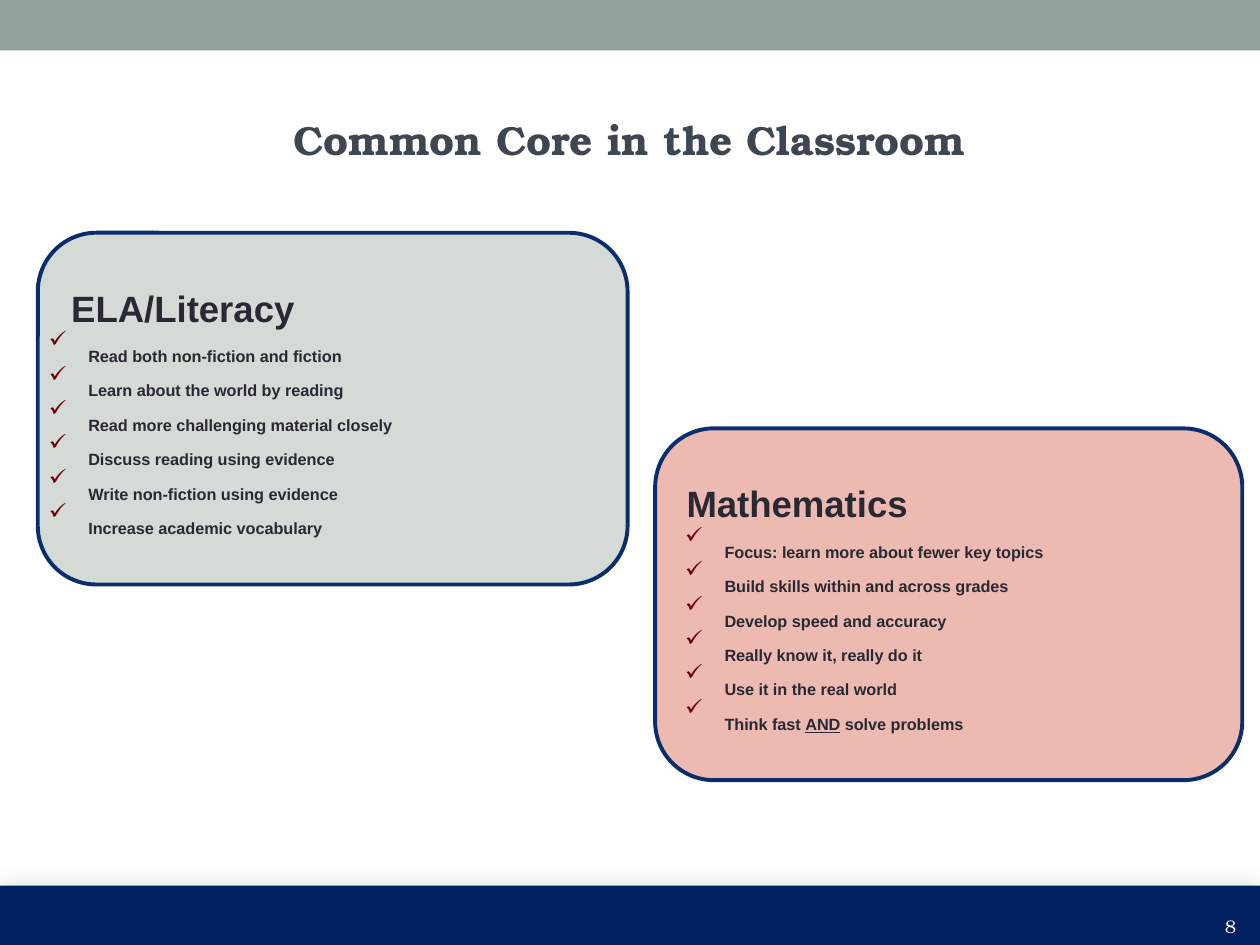
from dataclasses import dataclass

import pptx
import pptx.dml.color
import pptx.enum.shapes
import pptx.enum.text
import pptx.oxml.ns
import pptx.util
from lxml import etree

Pt = pptx.util.Pt
qn = pptx.oxml.ns.qn
Align = pptx.enum.text.PP_ALIGN
Anchor = pptx.enum.text.MSO_ANCHOR
Shape = pptx.enum.shapes.MSO_SHAPE


@dataclass(frozen=True)
class Theme:
    sage: str = "93A299"
    navy: str = "002060"
    border: str = "0A2D6B"
    ela: str = "D4DAD6"
    math: str = "EDBAB1"
    ink: str = "292934"
    title: str = "3E4652"
    check: str = "6F0000"
    white: str = "FFFFFF"
    sans: str = "Arial"
    serif: str = "TeX Gyre Bonum"
    title_size: int = 40
    heading_size: int = 36
    body_size: int = 16
    number_size: int = 18


THEME = Theme()


def rgb(color):
    return pptx.dml.color.RGBColor.from_string(color)


def add_node(parent, tag, **attrs):
    return etree.SubElement(parent, qn(tag), {k: str(v) for k, v in attrs.items()})


def add_box(slide, kind, box, fill, line=None):
    sp = slide.shapes.add_shape(kind, *map(Pt, box))
    sp.shadow.inherit = False
    sp.fill.solid()
    sp.fill.fore_color.rgb = rgb(fill)
    if line:
        sp.line.color.rgb = rgb(line)
        sp.line.width = Pt(2.25)
    else:
        sp.line.fill.background()
    return sp


def add_soft_shadow(sp):
    effects = sp._element.spPr.find(qn("a:effectLst"))
    shadow = add_node(effects, "a:outerShdw", blurRad=Pt(15), dist=Pt(3),
                      dir=90 * 60000, rotWithShape=0)
    color = add_node(shadow, "a:srgbClr", val="000000")
    add_node(color, "a:alpha", val=25000)


def add_check_bullet(p):
    p.line_spacing = 0.9
    pPr = p._p.get_or_add_pPr()
    pPr.set("marL", str(Pt(22.5)))
    pPr.set("indent", str(-Pt(22.5)))
    color = add_node(pPr, "a:buClr")
    add_node(color, "a:srgbClr", val=THEME.check)
    add_node(pPr, "a:buSzPct", val=80000)
    add_node(pPr, "a:buChar", char="✓")


def add_text(slide, box, lines, *, size, font=THEME.sans, color=THEME.ink, bold=True,
             align=Align.LEFT, anchor=Anchor.TOP, wrap=True, grow=False, bullets=False):
    """Each line is a list of runs; every second run is underlined."""
    tf = slide.shapes.add_textbox(*map(Pt, box)).text_frame
    tf.word_wrap = wrap
    tf.vertical_anchor = anchor
    if grow:
        tf.auto_size = pptx.enum.text.MSO_AUTO_SIZE.SHAPE_TO_FIT_TEXT
    for i, runs in enumerate(lines):
        p = tf.add_paragraph() if i else tf.paragraphs[0]
        p.alignment = align
        if bullets:
            add_check_bullet(p)
        for j, text in enumerate(runs):
            r = p.add_run()
            r.text = text
            r.font.name = font
            r.font.size = Pt(size)
            r.font.bold = bold
            r.font.color.rgb = rgb(color)
            if j % 2:
                r.font.underline = True
            r.font._element.set("baseline", "-25000")


def add_panel(slide, left, top, width, fill, heading, heading_dx, items, list_dx):
    add_box(slide, Shape.ROUNDED_RECTANGLE, (left, top, width, 201), fill, THEME.border)
    add_text(slide, (left + heading_dx, top + 2.5, 162, 36), [[heading]],
             size=THEME.heading_size, wrap=False, grow=True)
    add_text(slide, (left + list_dx, top + 51, width - list_dx, 113), items,
             size=THEME.body_size, grow=True, bullets=True)


def main():
    prs = pptx.Presentation()
    prs.slide_width, prs.slide_height = Pt(720), Pt(540)
    slide = prs.slides.add_slide(prs.slide_layouts[6])

    add_box(slide, Shape.RECTANGLE, (0, 0, 720, 28.8), THEME.sage)
    footer = add_box(slide, Shape.RECTANGLE, (0, 506, 720, 34), THEME.navy)
    add_soft_shadow(footer)

    add_text(slide, (0, 36, 720, 60), [["Common Core in the Classroom"]],
             size=THEME.title_size, font=THEME.serif, color=THEME.title,
             align=Align.CENTER, anchor=Anchor.MIDDLE)
    add_panel(slide, 21.6, 133, 337, THEME.ela, "ELA/Literacy", 12, [
        ["Read both non-fiction and fiction"],
        ["Learn about the world by reading"],
        ["Read more challenging material closely"],
        ["Discuss reading using evidence"],
        ["Write non-fiction using evidence"],
        ["Increase academic vocabulary"],
    ], list_dx=-0.7)
    add_panel(slide, 374.4, 244.8, 335.5, THEME.math, "Mathematics", 10.8, [
        ["Focus: learn more about fewer key topics"],
        ["Build skills within and across grades"],
        ["Develop speed and accuracy"],
        ["Really know it, really do it"],
        ["Use it in the real world"],
        ["Think fast ", "AND", " solve problems"],
    ], list_dx=10)
    add_text(slide, (637.2, 509, 76.3, 28.8), [["8"]], size=THEME.number_size,
             font=THEME.serif, color=THEME.white, bold=False,
             align=Align.RIGHT, anchor=Anchor.MIDDLE)

    prs.save("out.pptx")


if __name__ == "__main__":
    main()
